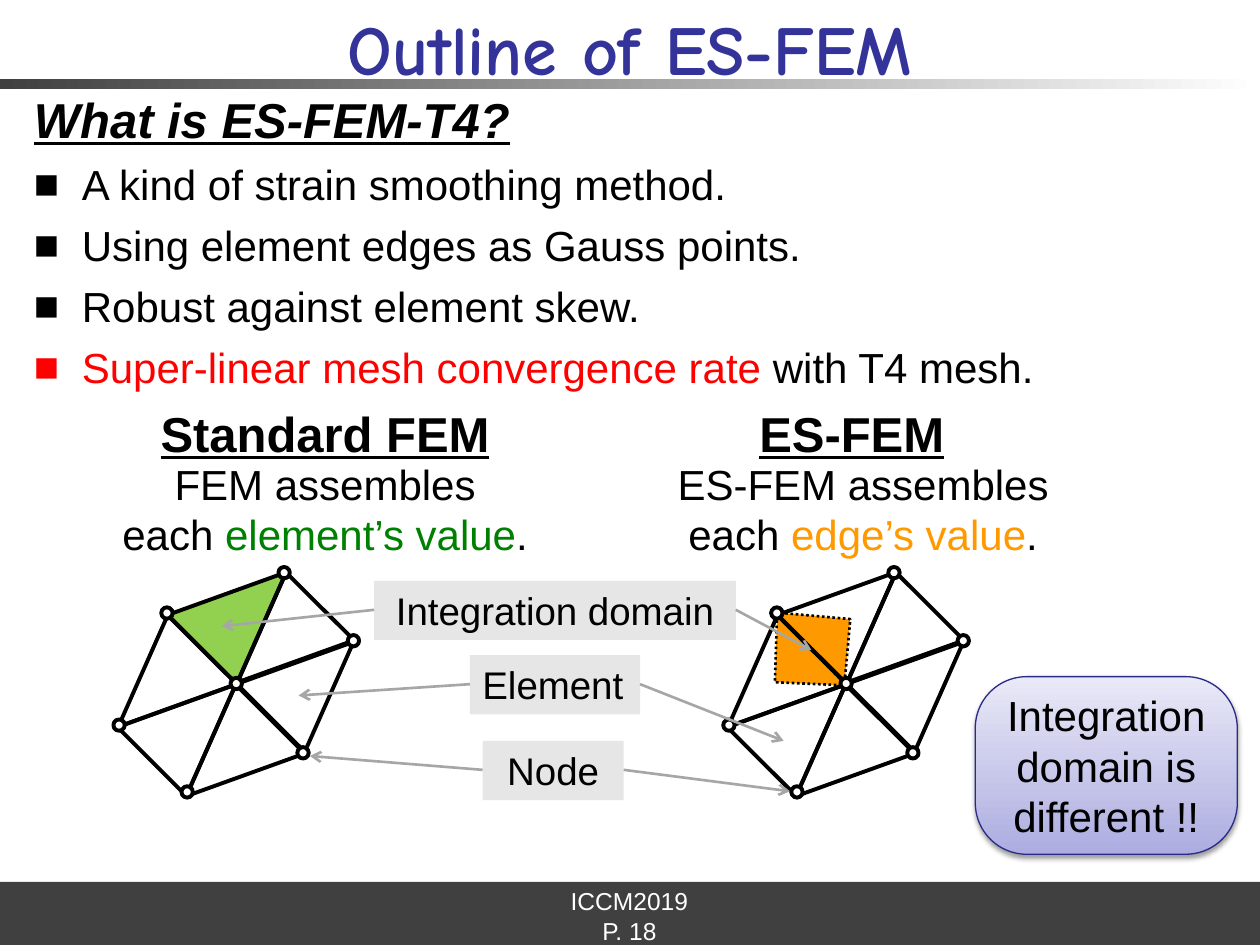
from lxml import etree
from pptx import Presentation
from pptx.dml.color import RGBColor
from pptx.enum.dml import MSO_LINE
from pptx.enum.shapes import MSO_CONNECTOR, MSO_SHAPE
from pptx.enum.text import MSO_ANCHOR, PP_ALIGN
from pptx.oxml.ns import qn
from pptx.util import Inches, Pt

RECT, ROUND = MSO_SHAPE.RECTANGLE, MSO_SHAPE.ROUNDED_RECTANGLE
TRI, OVAL = MSO_SHAPE.ISOSCELES_TRIANGLE, MSO_SHAPE.OVAL
LEFT, MID = PP_ALIGN.LEFT, PP_ALIGN.CENTER
TOP, CENTRE = MSO_ANCHOR.TOP, MSO_ANCHOR.MIDDLE
DOTS = MSO_LINE.ROUND_DOT

BLACK = RGBColor(0x00, 0x00, 0x00)
WHITE = RGBColor(0xFF, 0xFF, 0xFF)
DARK = RGBColor(0x40, 0x40, 0x40)
GREY = RGBColor(0xA6, 0xA6, 0xA6)
PALE = RGBColor(0xE6, 0xE6, 0xE6)
NAVY = RGBColor(0x33, 0x33, 0x99)
RED = RGBColor(0xFF, 0x00, 0x00)
GREEN = RGBColor(0x00, 0x80, 0x00)
LIME = RGBColor(0x92, 0xD0, 0x50)
ORANGE = RGBColor(0xFF, 0x99, 0x00)
EDGE = RGBColor(0x2A, 0x2A, 0x89)
LILAC = RGBColor(0xAD, 0xAD, 0xE1)
MIST = RGBColor(0xE9, 0xE9, 0xF7)

deck = Presentation()
deck.slide_width, deck.slide_height = Inches(10), Inches(7.5)
slide = deck.slides.add_slide(deck.slide_layouts[6])
shapes = slide.shapes


def draw(kind, at, fill=None, line=None, width=2.25):
    """Add a preset shape, or a text box if kind is None, at inches."""
    at = [Inches(n) for n in at]
    if kind is None:
        return shapes.add_textbox(*at)
    item = shapes.add_shape(kind, *at)
    item.shadow.inherit = False
    if fill is None:
        item.fill.background()
    else:
        item.fill.solid()
        item.fill.fore_color.rgb = fill
    if line is None:
        item.line.fill.background()
    else:
        item.line.color.rgb = line
        item.line.width = Pt(width)
    return item


def write(item, runs, size, color=BLACK, align=MID, anchor=TOP, inset=None, face="Arial"):
    """Fill the first paragraph; a run is (text, own colour or None)."""
    frame = item.text_frame
    frame.word_wrap = True
    frame.vertical_anchor = anchor
    if inset is not None:
        frame.margin_left = frame.margin_right = Inches(inset)
        frame.margin_top = frame.margin_bottom = Inches(inset)
    para = frame.paragraphs[0]
    para.alignment = align
    para.font.size, para.font.name = Pt(size), face
    para.font.color.rgb = color
    for text, tint in runs:
        if text == "\n":
            para.add_line_break()
            continue
        run = para.add_run()
        run.text = text
        if tint is not None:
            run.font.color.rgb = tint
    return para


# Header rule and footer
rule = draw(RECT, (0, 0.63, 10, 0.08), DARK)
rule.fill.gradient()
rule.fill.gradient_angle = 0
for stop, tint in zip(rule.fill.gradient_stops, (DARK, WHITE)):
    stop.color.rgb = tint
draw(RECT, (0, 7, 10, 0.5), DARK)
for text, top, high in (("ICCM2019", 7, 0.3), ("P. 18", 7.28, 0.22)):
    write(draw(None, (4.42, top, 1.15, high)), [(text, None)], 14, WHITE,
          anchor=CENTRE, inset=0.04)

# Title
title = write(draw(None, (0, 0.04, 10, 0.68)), [("Outline of ES-FEM", None)], 40,
              NAVY, inset=0, face="Comic Neue")
title.font.bold = True
glow = etree.SubElement(title.runs[0].font._element, qn("a:effectLst"))
cast = etree.SubElement(glow, qn("a:outerShdw"), dist="25400", dir="2700000")
etree.SubElement(cast, qn("a:srgbClr"), val="B7DEE8")

# Main text
body = draw(None, (0.27, 0.71, 9.44, 3.2))
head = write(body, [("What is ES-FEM-T4?", None)], 28, align=LEFT, inset=0)
head.font.bold = head.font.italic = head.font.underline = True
points = (
    [("A kind of strain smoothing method.", None)],
    [("Using element edges as Gauss points.", None)],
    [("Robust against element skew.", None)],
    [("Super-linear mesh convergence rate ", RED), ("with T4 mesh.", None)],
)
for runs in points:
    para = body.text_frame.add_paragraph()
    props = para._p.get_or_add_pPr()
    props.set("marL", str(Inches(0.38)))
    props.set("indent", str(-Inches(0.38)))
    etree.SubElement(props, qn("a:buFont"), typeface="Arial")
    etree.SubElement(props, qn("a:buChar"), char="■")
    para.space_before = Pt(6)
    para.font.size, para.font.name = Pt(24), "Arial"
    para.font.color.rgb = BLACK
    for text, tint in runs:
        run = para.add_run()
        run.text = text
        if tint is not None:
            run.font.color.rgb = tint

names = body.text_frame.add_paragraph()
tabs = etree.SubElement(names._p.get_or_add_pPr(), qn("a:tabLst"))
for stop in (2.31, 6.49):
    etree.SubElement(tabs, qn("a:tab"), pos=str(Inches(stop)), algn="ctr")
names.space_before = Pt(6.5)
names.font.size, names.font.name = Pt(28), "Arial"
names.font.bold = True
names.font.color.rgb = BLACK
for name in ("Standard FEM", "ES-FEM"):
    names.add_run().text = "\t"
    run = names.add_run()
    run.text = name
    run.font.underline = True

# Meshes: the shaded domain lies under six triangles and seven nodes
UP, DOWN, STEP = 340.2, 160.2, 4.84
cells = ((1.73, 4.58, UP), (1.42, 4.69, DOWN), (1.96, 5.23, DOWN),
         (1.02, 5.58, DOWN), (1.33, 5.47, UP), (0.79, 4.92, UP))
nodes = ((1.28, 4.82), (2.21, 4.5), (1.83, 5.38), (0.9, 5.71),
         (1.44, 6.24), (2.36, 5.93), (2.76, 5.04))
SKEW = 0.67

domain = draw(TRI, (1.41, 4.69, 1, 0.7), LIME)
domain.rotation, domain.adjustments[0] = DOWN, SKEW
for left, top, turn, skew in ((5.91, 5.1, 225.5, 0.53), (6.17, 4.81, 45.5, 0.58)):
    half = draw(TRI, (left, top, 0.79, 0.39), ORANGE, BLACK, 1.5)
    half.line.dash_style = DOTS
    half.rotation, half.adjustments[0] = turn, skew
for shift in (0, STEP):
    for left, top, turn in cells:
        cell = draw(TRI, (left + shift, top, 1, 0.7), None, BLACK)
        cell.rotation, cell.adjustments[0] = turn, SKEW
    for left, top in nodes:
        draw(OVAL, (left + shift, top, 0.09, 0.09), WHITE, BLACK)

# Labels, each with an arrow to either mesh
labels = (
    ("Integration domain", MID, 2.97, 4.61, 2.87, (1.76, 4.97), (6.44, 5.16)),
    ("Element", LEFT, 3.73, 5.2, 1.35, (2.37, 5.52), (6.22, 5.88)),
    ("Node", MID, 3.83, 5.88, 1.12, (2.46, 6), (6.27, 6.28)),
)
for text, align, left, top, wide, west, east in labels:
    write(draw(RECT, (left, top, wide, 0.47), PALE), [(text, None)], 22, align=align)
    for start, end in ((left, west), (left + wide, east)):
        ends = [Inches(n) for n in (start, top + 0.23, *end)]
        arrow = shapes.add_connector(MSO_CONNECTOR.STRAIGHT, *ends)
        arrow.line.color.rgb, arrow.line.width = GREY, Pt(1.5)
        etree.SubElement(arrow.line._get_or_add_ln(), qn("a:tailEnd"), type="arrow")
        etree.SubElement(arrow._element.spPr, qn("a:effectLst"))

# What each method assembles
for left, name, value, tint in ((0.87, "FEM", "element’s value", GREEN),
                                (5.14, "ES-FEM", "edge’s value", ORANGE)):
    write(draw(None, (left, 3.59, 3.42, 0.91)),
          [(name + " assembles", None), ("\n", None), ("each ", None),
           (value, tint), (".", None)], 24)

# Closing remark
note = draw(ROUND, (7.74, 5.37, 2.08, 1.41), MIST, EDGE, 0.75)
note.adjustments[0] = 0.29
note.fill.gradient()
note.fill.gradient_angle = 90
for stop, tint in zip(note.fill.gradient_stops, (LILAC, MIST)):
    stop.color.rgb = tint
cast = etree.SubElement(note._element.spPr.find(qn("a:effectLst")), qn("a:outerShdw"),
                        blurRad=str(Pt(3.1)), dist=str(Pt(1.6)), dir="5400000")
shade = etree.SubElement(cast, qn("a:srgbClr"), val="000000")
etree.SubElement(shade, qn("a:alpha"), val="38000")
write(note, [("Integration", None), ("\n", None), ("domain is", None), ("\n", None),
             ("different !!", None)], 24, anchor=CENTRE)

deck.save("out.pptx")
